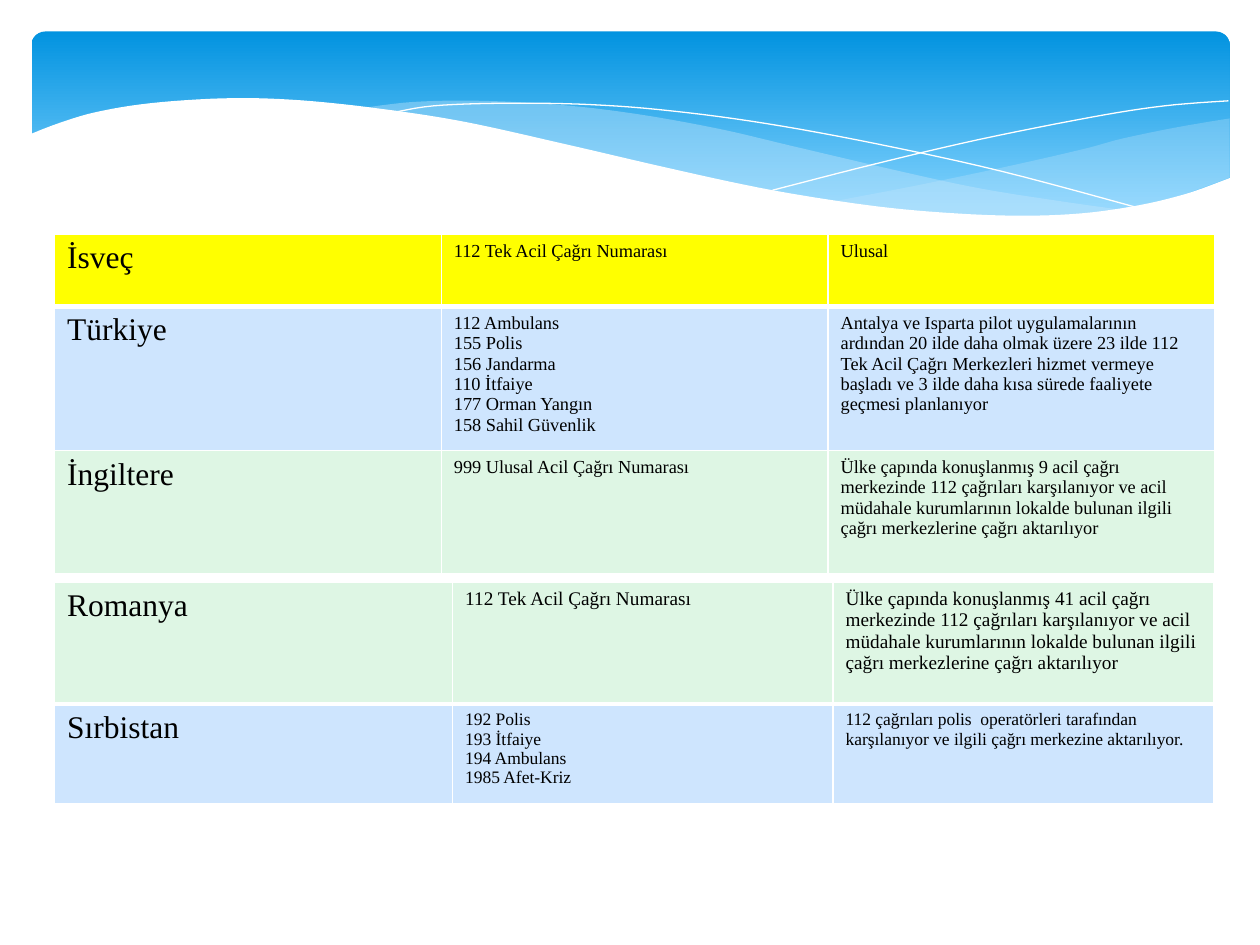
from dataclasses import dataclass

from lxml import etree
from pptx import Presentation
from pptx.dml.color import RGBColor
from pptx.enum import shapes
from pptx.oxml import ns
from pptx.util import Pt


@dataclass(frozen=True)
class Theme:
    font: str = "Times New Roman"
    text: str = "000000"
    white: str = "FFFFFF"
    yellow: str = "FFFF00"
    blue: str = "CEE5FE"
    green: str = "DEF6E4"
    sky_top: str = "0293E0"
    sky_bottom: str = "83D3FE"
    ribbon: str = "C6E7FC"
    country: float = 18
    body: float = 10.5
    body_large: float = 11
    body_small: float = 10


T = Theme()

RIGHT_RIBBON = [
    [(702.7, 67.7), (673, 72.7), (641.5, 79.2), (620, 85), (579.6, 94.3),
     (525, 105.8), (476, 115.2)],
    [(476, 115.2), (507.6, 118.8), (545, 122.4), (578, 123.8), (607.7, 123.1),
     (640, 119.5), (668, 113.8), (702.7, 101.5)],
]
MIDDLE_RIBBON = [
    [(206, 61.9), (236, 58.3), (273.6, 57.6), (318, 59.8), (361.4, 64.8),
     (409.7, 73.4), (452.9, 83.5), (508.3, 96.5), (558, 107.3),
     (602.6, 114.5), (643, 120.2)],
    [(643, 120.2), (617, 123.1), (589, 124.6), (556.6, 123.8), (519.8, 121),
     (478.8, 115.9), (432.7, 108), (381.6, 97.2), (323.3, 83.5),
     (275.8, 72.7), (246.2, 67.7), (206, 61.9)],
]
FALLING_LINE = [
    [(222.5, 64.8), (247.7, 60.5), (288.7, 59), (337.7, 59.8), (383.8, 63.4),
     (437.8, 70.6), (500.4, 82.1), (572.4, 97.9), (653, 119.5)],
]
RISING_LINE = [
    [(441.4, 108.7), (500.4, 93.6), (558.7, 79.9), (623.5, 67),
     (665.3, 60.5), (702, 57.6)],
]
WHITE_WAVE = [
    [(16.6, 77), (33, 70.6), (54.7, 64.1), (85.7, 59), (127.4, 56.2),
     (165.6, 56.9), (210, 61.2), (262.8, 69.1), (321.8, 82.1), (380.9, 95.8),
     (434, 107.3), (481, 115.2), (522.7, 120.2), (571, 123.1), (612, 122.4),
     (647, 118), (677, 111), (703.4, 101.5)],
    [(703.4, 161.3), (16.6, 161.3)],
]

UPPER_ROWS = [
    ("İsveç", "112 Tek Acil Çağrı Numarası", "Ulusal", T.yellow, T.body),
    ("Türkiye",
     "112 Ambulans\n155 Polis\n156 Jandarma\n110 İtfaiye\n"
     "177 Orman Yangın\n158 Sahil Güvenlik",
     "Antalya ve Isparta pilot uygulamalarının ardından 20 ilde daha olmak "
     "üzere 23 ilde 112  Tek Acil Çağrı Merkezleri hizmet vermeye başladı ve "
     "3 ilde daha kısa sürede faaliyete geçmesi planlanıyor", T.blue, T.body),
    ("İngiltere", "999 Ulusal Acil Çağrı Numarası",
     "Ülke çapında konuşlanmış 9 acil çağrı merkezinde 112 çağrıları "
     "karşılanıyor ve acil müdahale kurumlarının lokalde bulunan ilgili "
     "çağrı merkezlerine çağrı aktarılıyor", T.green, T.body),
]
LOWER_ROWS = [
    ("Romanya", "112 Tek Acil Çağrı Numarası",
     "Ülke çapında konuşlanmış 41 acil çağrı merkezinde 112 çağrıları "
     "karşılanıyor ve acil müdahale kurumlarının lokalde bulunan ilgili "
     "çağrı merkezlerine çağrı aktarılıyor", T.green, T.body_large),
    ("Sırbistan", "192 Polis\n193 İtfaiye\n194 Ambulans\n1985 Afet-Kriz",
     "112 çağrıları polis  operatörleri tarafından karşılanıyor ve ilgili "
     "çağrı merkezine aktarılıyor.", T.blue, T.body_small),
]


def rgb(color):
    return RGBColor.from_string(color)


def smooth(points, steps=6):
    ends = [points[0], *points, points[-1]]
    curve = [points[0]]
    for a, b, c, d in zip(ends, ends[1:], ends[2:], ends[3:]):
        for i in range(1, steps + 1):
            t = i / steps
            curve.append(tuple(
                (2 * q + (r - p) * t + (2 * p - 5 * q + 4 * r - u) * t ** 2
                 + (3 * q - p - 3 * r + u) * t ** 3) / 2
                for p, q, r, u in zip(a, b, c, d)))
    return curve


def add_curve(s, curves, fill=None, alpha=None, line=None):
    pts = [(Pt(x), Pt(y)) for c in curves for x, y in smooth(c)]
    builder = s.shapes.build_freeform(*pts[0])
    builder.add_line_segments(pts[1:], close=fill is not None)
    sp = builder.convert_to_shape()
    sp.shadow.inherit = False
    if fill:
        sp.fill.solid()
        sp.fill.fore_color.rgb = rgb(fill)
    else:
        sp.fill.background()
    if alpha:
        clr = sp.fill._xPr.find(".//" + ns.qn("a:srgbClr"))
        etree.SubElement(clr, ns.qn("a:alpha"), val=str(alpha * 1000))
    if line:
        sp.line.color.rgb = rgb(line)
        sp.line.width = Pt(0)
    else:
        sp.line.fill.background()


def add_sky(s):
    sp = s.shapes.add_shape(shapes.MSO_SHAPE.ROUNDED_RECTANGLE,
                            Pt(18), Pt(18), Pt(684.7), Pt(112.3))
    sp.adjustments[0] = 0.07
    sp.shadow.inherit = False
    sp.line.fill.background()
    sp.fill.gradient()
    sp.fill.gradient_angle = 270
    stops = zip(sp.fill.gradient_stops, (T.sky_top, T.sky_bottom), (0, 0.9))
    for stop, color, position in stops:
        stop.color.rgb = rgb(color)
        stop.position = position


def write(tf, text, size, color=T.text, font=T.font):
    for i, line in enumerate(text.split("\n")):
        p = tf.add_paragraph() if i else tf.paragraphs[0]
        r = p.add_run()
        r.text = line
        r.font.size = Pt(size)
        r.font.name = font
        r.font.bold = False
        r.font.color.rgb = rgb(color)


def set_borders(cell, bottom):
    pr = cell._tc.get_or_add_tcPr()
    for i, (side, width) in enumerate(zip("LRTB", (1, 1, 1, bottom))):
        ln = etree.Element(ns.qn(f"a:ln{side}"), w=str(Pt(width)))
        fill = etree.SubElement(ln, ns.qn("a:solidFill"))
        etree.SubElement(fill, ns.qn("a:srgbClr"), val=T.white)
        pr.insert(i, ln)


def add_country_table(s, top, widths, heights, rows):
    frame = s.shapes.add_table(len(rows), len(widths), Pt(31.2), Pt(top),
                               Pt(sum(widths)), Pt(sum(heights)))
    table = frame.table
    for column, width in zip(table.columns, widths):
        column.width = Pt(width)
    for i, (*texts, fill, size) in enumerate(rows):
        table.rows[i].height = Pt(heights[i])
        for j, text in enumerate(texts):
            cell = table.cell(i, j)
            cell.fill.solid()
            cell.fill.fore_color.rgb = rgb(fill)
            set_borders(cell, bottom=1 if i else 3)
            write(cell.text_frame, text, size if j else T.country)


def main():
    prs = Presentation()
    prs.slide_width, prs.slide_height = Pt(720), Pt(540)
    s = prs.slides.add_slide(prs.slide_layouts[6])
    add_sky(s)
    add_curve(s, RIGHT_RIBBON, fill=T.ribbon, alpha=29)
    add_curve(s, MIDDLE_RIBBON, fill=T.ribbon, alpha=40)
    add_curve(s, FALLING_LINE, line=T.white)
    add_curve(s, RISING_LINE, line=T.white)
    add_curve(s, WHITE_WAVE, fill=T.white)
    add_country_table(s, 134, [221] * 3, [41.2, 82.3, 70.3], UPPER_ROWS)
    add_country_table(s, 332.6, [227.4, 217.4, 217.4], [69.8, 57.2], LOWER_ROWS)
    prs.save("out.pptx")


if __name__ == "__main__":
    main()
